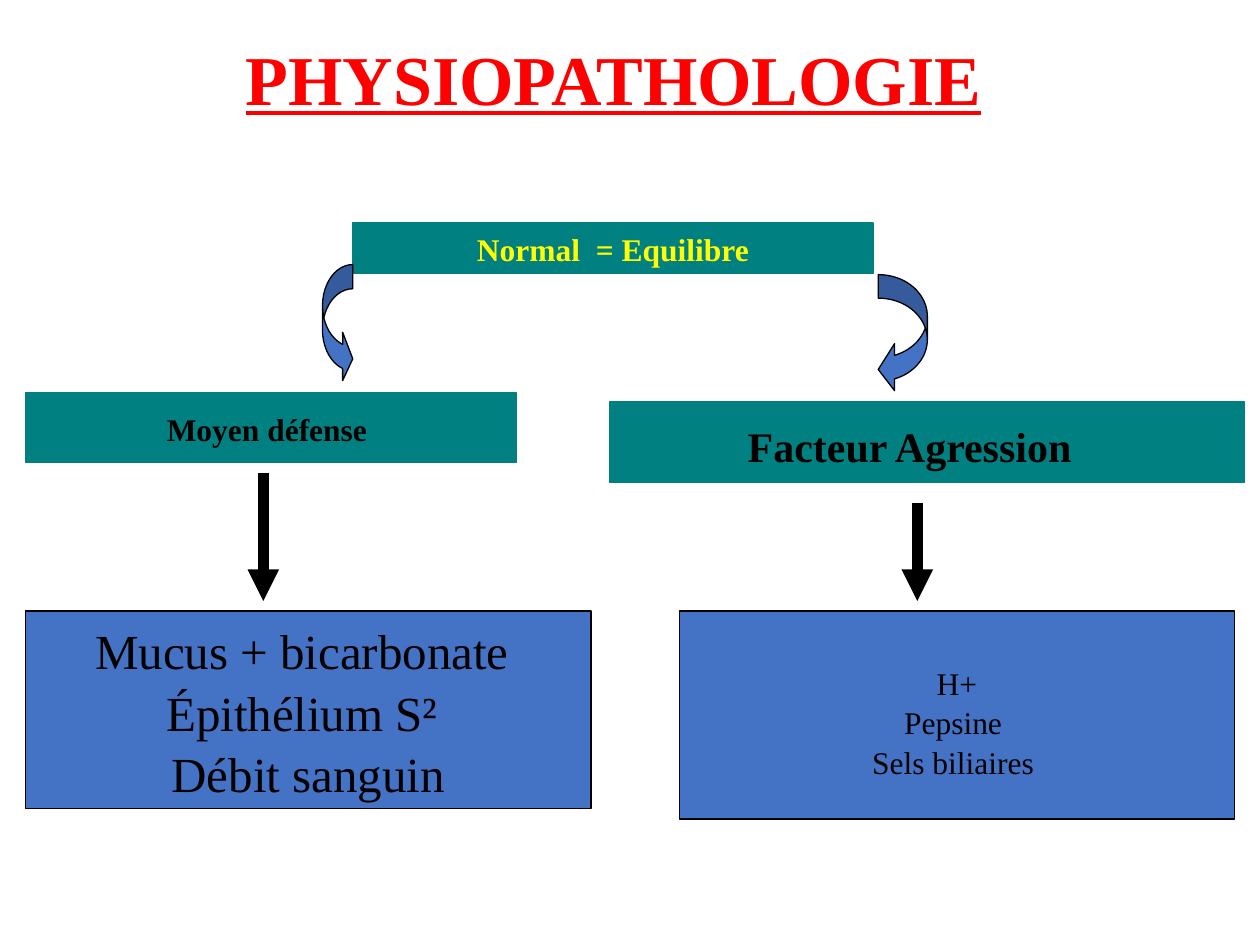
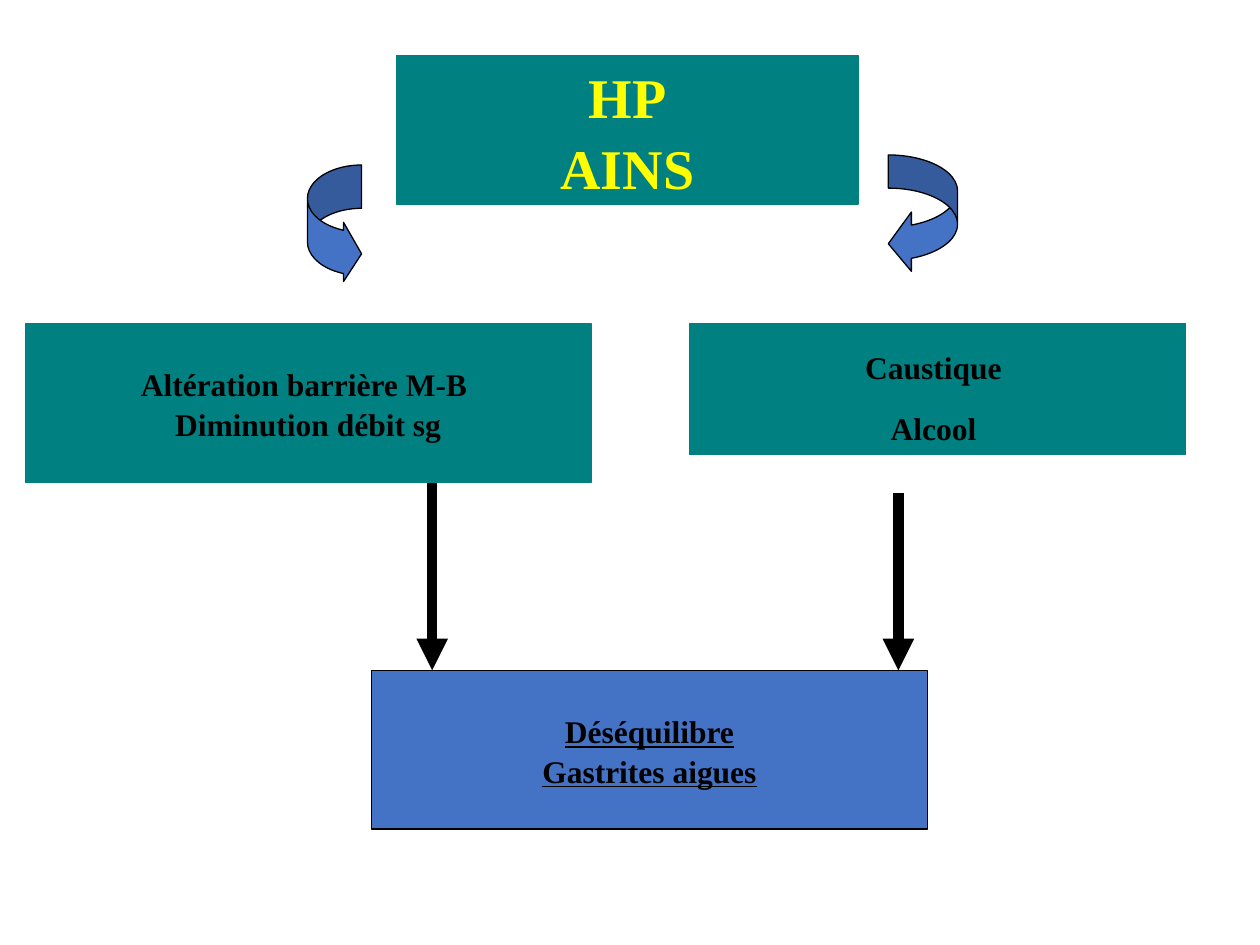
from dataclasses import dataclass

from lxml.etree import SubElement
from pptx import Presentation
from pptx.dml.color import RGBColor
from pptx.enum.shapes import MSO_CONNECTOR, MSO_SHAPE
from pptx.enum.text import MSO_ANCHOR, MSO_AUTO_SIZE, PP_ALIGN
from pptx.oxml.ns import qn
from pptx.util import Inches, Pt


@dataclass(frozen=True)
class Theme:
    font: str = "Times New Roman"
    teal: RGBColor = RGBColor(0x00, 0x80, 0x80)
    blue: RGBColor = RGBColor(0x44, 0x72, 0xC4)
    black: RGBColor = RGBColor(0x00, 0x00, 0x00)
    yellow: RGBColor = RGBColor(0xFF, 0xFF, 0x00)
    red: RGBColor = RGBColor(0xFF, 0x00, 0x00)
    title: int = 40
    cause: int = 32
    large: int = 28
    heading: int = 24
    body: int = 18
    outline: float = 0.75
    arrow: int = 6
    line_spacing: float = 1.05


THEME = Theme()
TITLE_LAYOUT, BLANK_LAYOUT = 5, 6

# Each box: position, paragraphs, then the styles that differ from the defaults.
# Bends turn left or right; arrows are x, top, bottom.
SLIDES = [
    {
        "title": "PHYSIOPATHOLOGIE",
        "boxes": [
            ((2.8, 1.77, 4.13, 0.4), ["Normal  = Equilibre"], {"color": THEME.yellow}),
            ((0.2, 3.12, 3.9, 0.55), ["Moyen défense "], {}),
            ((4.84, 3.19, 5.04, 0.64), ["Facteur Agression"],
             {"size": THEME.heading, "top": 0.09, "right": 0.38}),
            ((0.2, 4.85, 4.49, 1.57),
             ["Mucus + bicarbonate ", "Épithélium S² ", "Débit sanguin"],
             {"result": True, "size": THEME.large, "bold": False}),
            ((5.39, 4.85, 4.41, 1.65), ["H+", "Pepsine ", "Sels biliaires "],
             {"result": True, "bold": False, "top": 0.15}),
        ],
        "bends": [("right", (2.56, 2.1, 0.24, 0.94)), ("left", (6.97, 2.18, 0.39, 0.94))],
        "arrows": [(2.09, 3.75, 4.77), (7.28, 3.99, 4.77)],
    },
    {
        "title": None,
        "boxes": [
            ((3.15, 0.44, 3.66, 1.18), ["HP", "AINS"],
             {"size": THEME.cause, "color": THEME.yellow}),
            ((0.2, 2.57, 4.49, 1.26), ["Altération barrière M-B ", "Diminution débit sg"], {}),
            ((5.47, 2.57, 3.94, 1.04), ["Caustique ", "Alcool "], {"top": 0.16, "gap": 12}),
            ((2.95, 5.32, 4.41, 1.26), ["Déséquilibre", "Gastrites aigues"],
             {"result": True, "underline": True}),
        ],
        "bends": [("right", (2.44, 1.31, 0.43, 0.94)), ("left", (7.05, 1.23, 0.55, 0.94))],
        "arrows": [(3.43, 3.83, 5.32), (7.13, 3.91, 5.32)],
    },
]

BENDS = {
    "right": (MSO_SHAPE.CURVED_RIGHT_ARROW, (0.8, 1.6, 0.333)),
    "left": (MSO_SHAPE.CURVED_LEFT_ARROW, (0.479, 0.959, 0.333)),
}


def write(frame, lines, size, color, bold=True, underline=False,
          align=PP_ALIGN.CENTER, gap=0):
    frame.text = "\n".join(lines)
    for index, para in enumerate(frame.paragraphs):
        para.alignment = align
        para.line_spacing = THEME.line_spacing
        para.space_before = Pt(gap if index else 0)
        for span in para.runs:
            font = span.font
            font.name, font.size, font.bold = THEME.font, Pt(size), bold
            font.underline = underline
            font.color.rgb = color


def add_filled_shape(slide, kind, place, fill, outline):
    shape = slide.shapes.add_shape(kind, *map(Inches, place))
    shape.shadow.inherit = False
    shape.fill.solid()
    shape.fill.fore_color.rgb = fill
    shape.line.color.rgb = outline
    shape.line.width = Pt(THEME.outline)
    return shape


def add_box(slide, place, lines, result=False, size=THEME.body, color=THEME.black,
            top=0.05, right=0.1, **style):
    """Add a teal box, or a blue one with a black outline for a result."""
    fill, outline = (THEME.blue, THEME.black) if result else (THEME.teal, THEME.teal)
    frame = add_filled_shape(slide, MSO_SHAPE.RECTANGLE, place, fill, outline).text_frame
    frame.word_wrap = False
    frame.vertical_anchor = MSO_ANCHOR.MIDDLE
    frame.margin_top, frame.margin_right = Inches(top), Inches(right)
    write(frame, lines, size, color, **style)


def add_bend(slide, direction, place):
    kind, adjustments = BENDS[direction]
    bend = add_filled_shape(slide, kind, place, THEME.blue, THEME.black)
    for index, value in enumerate(adjustments):
        bend.adjustments[index] = value


def add_down_arrow(slide, x, top, bottom):
    arrow = slide.shapes.add_connector(
        MSO_CONNECTOR.STRAIGHT, Inches(x), Inches(top), Inches(x), Inches(bottom))
    arrow.line.color.rgb = THEME.black
    arrow.line.width = Pt(THEME.arrow)
    SubElement(arrow.line._get_or_add_ln(), qn("a:tailEnd"), type="triangle")
    SubElement(arrow._element.spPr, qn("a:effectLst"))


def set_title(slide, text):
    title = slide.shapes.title
    title.left, title.top, title.width, title.height = map(Inches, (1.85, 0.21, 6.1, 0.77))
    frame = title.text_frame
    frame.auto_size = MSO_AUTO_SIZE.NONE
    frame.vertical_anchor = MSO_ANCHOR.MIDDLE
    write(frame, [text], THEME.title, THEME.red, underline=True, align=PP_ALIGN.LEFT)


def main():
    deck = Presentation()
    deck.slide_width, deck.slide_height = Inches(10), Inches(7.5)
    for page in SLIDES:
        layout = TITLE_LAYOUT if page["title"] else BLANK_LAYOUT
        slide = deck.slides.add_slide(deck.slide_layouts[layout])
        if page["title"]:
            set_title(slide, page["title"])
        for place, lines, style in page["boxes"]:
            add_box(slide, place, lines, **style)
        for direction, place in page["bends"]:
            add_bend(slide, direction, place)
        for arrow in page["arrows"]:
            add_down_arrow(slide, *arrow)
    deck.save("out.pptx")


if __name__ == "__main__":
    main()
